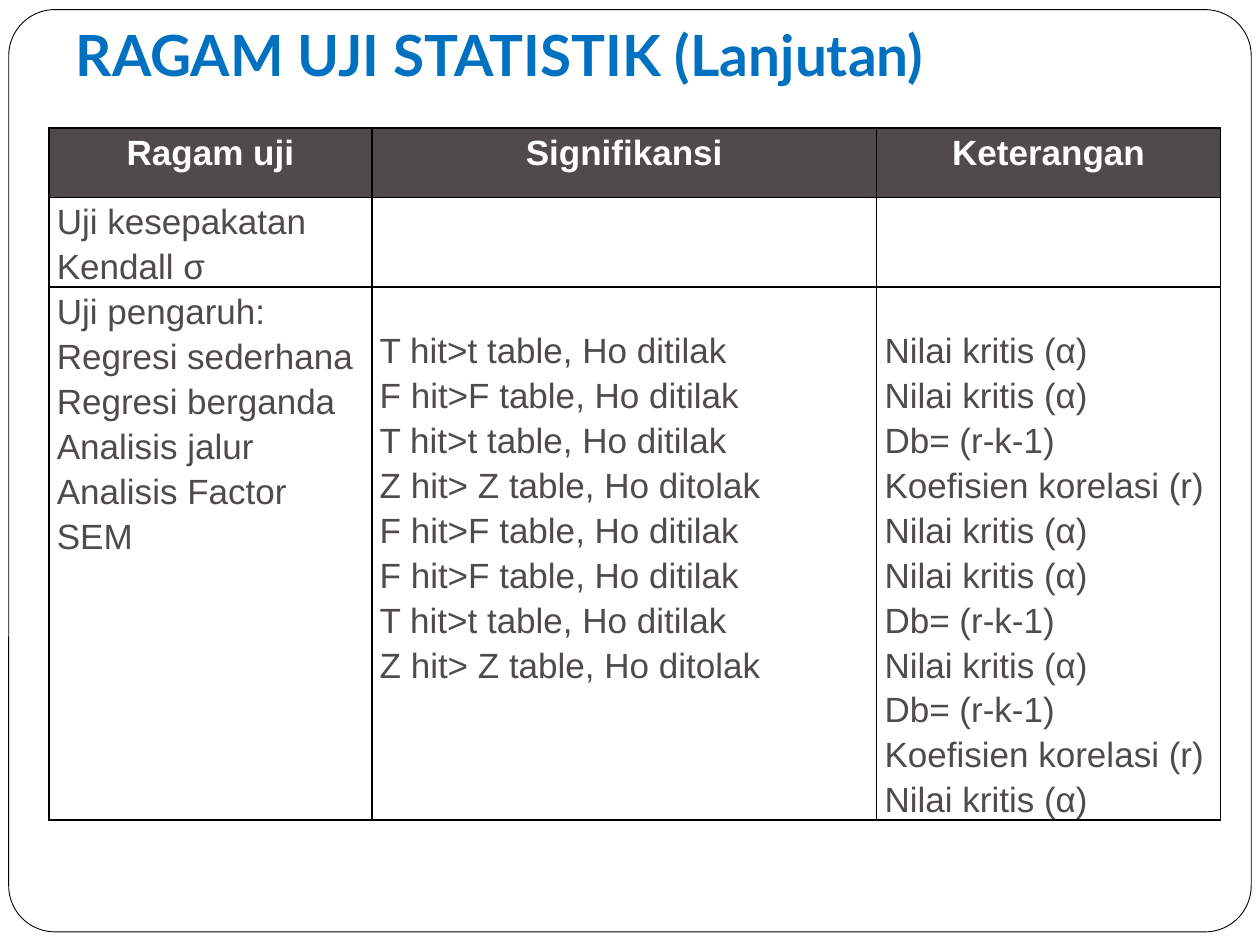
from lxml.etree import SubElement
from pptx import Presentation
from pptx.dml.color import RGBColor
from pptx.enum.shapes import MSO_SHAPE
from pptx.enum.text import MSO_ANCHOR, PP_ALIGN
from pptx.oxml.ns import qn
from pptx.util import Pt

# Content
TITLE = "RAGAM UJI STATISTIK (Lanjutan)"
HEADS = ["Ragam uji", "Signifikansi", "Keterangan"]
T, F = "T hit>t table, Ho ditilak", "F hit>F table, Ho ditilak"
Z = "Z hit> Z table, Ho ditolak"
CRIT, FREE, CORR = "Nilai kritis (α)", "Db= (r-k-1)", "Koefisien korelasi (r)"
AGREE = ["Uji kesepakatan", "Kendall σ"]
EFFECT = ["Uji pengaruh:", "Regresi sederhana", "Regresi berganda",
          "Analisis jalur", "Analisis Factor", "SEM"]
SIGNS = [T, F, T, Z, F, F, T, Z]
NOTES = [CRIT, CRIT, FREE, CORR, CRIT, CRIT, FREE, CRIT, FREE, CORR, CRIT]
ROWS = [[[head] for head in HEADS], [AGREE, [], []], [EFFECT, SIGNS, NOTES]]

# Measures and colours
WIDTHS = [184.5, 288.5, 196.5]
HEIGHTS = [39.6, 51, 304]
DROP = 22.3  # lowers the lists beside the tests by one line
DARK, WHITE, BLUE, BLACK = "4F4B4B", "FFFFFF", "0070C0", "000000"


def paint(item, hue):
    item.solid()
    item.fore_color.rgb = RGBColor.from_string(hue)


def write(para, text, face, size, hue, bold):
    run = para.add_run()
    run.text = text
    font = run.font
    font.name, font.size, font.bold = face, Pt(size), bold
    paint(font.fill, hue)


def edge(cell):
    props = cell._tc.get_or_add_tcPr()
    for spot, side in enumerate(["lnL", "lnR", "lnT", "lnB"]):
        line = SubElement(props, qn("a:" + side), w=str(Pt(1)))
        fill = SubElement(line, qn("a:solidFill"))
        SubElement(fill, qn("a:srgbClr"), val=BLACK)
        props.insert(spot, line)


def fill_cell(cell, lines, head, drop):
    cell.margin_left = cell.margin_right = Pt(4.5)
    cell.margin_top, cell.margin_bottom = Pt(drop), 0
    edge(cell)
    if head:
        paint(cell.fill, DARK)
    else:
        cell.fill.background()
    frame = cell.text_frame
    for num, text in enumerate(lines):
        para = frame.add_paragraph() if num else frame.paragraphs[0]
        para.line_spacing = 1.15
        if head:
            para.alignment = PP_ALIGN.CENTER
            para.space_before, para.space_after = Pt(6), Pt(3)
        write(para, text, "Arial", 20, WHITE if head else DARK, head)


deck = Presentation()
deck.slide_width, deck.slide_height = Pt(720), Pt(540)
slide = deck.slides.add_slide(deck.slide_layouts[5])
shapes = slide.shapes

# Rounded frame, sent behind the title
panel = shapes.add_shape(MSO_SHAPE.ROUNDED_RECTANGLE,
                         Pt(5), Pt(5.5), Pt(710), Pt(527))
panel.adjustments[0] = 0.05
panel.shadow.inherit = False
paint(panel.fill, WHITE)
paint(panel.line.fill, BLACK)
panel.line.width = Pt(0.5)
shapes.title._element.addprevious(panel._element)

# Title
title = shapes.title
title.left, title.top, title.width, title.height = Pt(36), Pt(11.5), Pt(648), Pt(46)
frame = title.text_frame
frame.vertical_anchor = MSO_ANCHOR.BOTTOM
frame.margin_left = frame.margin_right = frame.margin_bottom = Pt(7.2)
frame.margin_top = Pt(3.6)
frame.paragraphs[0].alignment = PP_ALIGN.LEFT
write(frame.paragraphs[0], TITLE, "Lato", 32.4, BLUE, True)

# Table
table = shapes.add_table(len(ROWS), len(HEADS), Pt(28), Pt(73.2),
                         Pt(sum(WIDTHS)), Pt(sum(HEIGHTS))).table
table.horz_banding = False
for col, width in zip(table.columns, WIDTHS):
    col.width = Pt(width)
for row, height in zip(table.rows, HEIGHTS):
    row.height = Pt(height)
for r, row in enumerate(ROWS):
    for c, lines in enumerate(row):
        drop = DROP if r == 2 and c else 0
        fill_cell(table.cell(r, c), lines, r == 0, drop)

deck.save("out.pptx")
